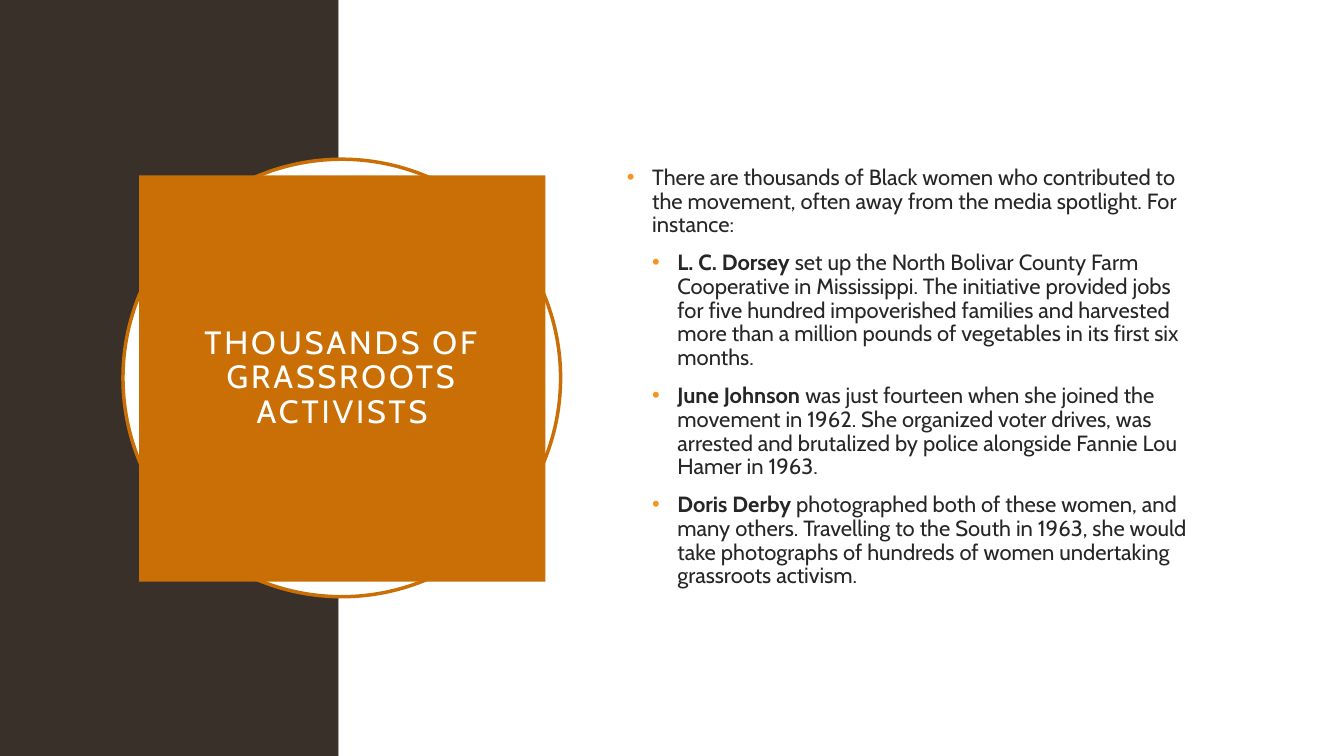
"""Builds a slide on grassroots activists of the movement."""
import pptx
import pptx.util
import pptx.dml.color
import pptx.enum.shapes
import pptx.enum.text
import lxml.etree

Inches = pptx.util.Inches
Pt = pptx.util.Pt
SHAPE = pptx.enum.shapes.MSO_SHAPE
MIDDLE = pptx.enum.text.MSO_ANCHOR.MIDDLE
CENTER = pptx.enum.text.PP_ALIGN.CENTER
NS = "{http://schemas.openxmlformats.org/drawingml/2006/main}"
ORANGE = "CA6F06"


def paint(target, color):
    if hasattr(target, "solid"):
        target.solid()
        target = target.fore_color
    target.rgb = pptx.dml.color.RGBColor.from_string(color)


def write(para, text, size, color, bold=False):
    run = para.add_run()
    run.text = text
    style = {"name": "Cabin", "size": Pt(size), "bold": bold}
    for key, value in style.items():
        setattr(run.font, key, value)
    paint(run.font.color, color)
    return run


deck = pptx.Presentation()
deck.slide_width = Inches(13.33)
deck.slide_height = Inches(7.5)
slide = deck.slides.add_slide(deck.slide_layouts[6])

panels = [
    (SHAPE.RECTANGLE, (0, 0, 3.36, 7.5), "39302A", None),
    (SHAPE.RECTANGLE, (3.36, 0, 9.97, 7.5), "FFFFFF", None),
    (SHAPE.OVAL, (1.22, 1.58, 4.34, 4.34), "FFFFFF", ORANGE),
    (SHAPE.RECTANGLE, (1.38, 1.74, 4.03, 4.03), ORANGE, None),
]
for kind, box, fill, line in panels:
    panel = slide.shapes.add_shape(kind, *map(Inches, box))
    panel.shadow.inherit = False
    paint(panel.fill, fill)
    if line:
        paint(panel.line.fill, line)
        panel.line.width = Pt(2.5)
    else:
        panel.line.fill.background()

frame = panel.text_frame
for side in ("left", "right", "top", "bottom"):
    setattr(frame, f"margin_{side}", Inches(0.2))
for key, value in {"word_wrap": True, "vertical_anchor": MIDDLE}.items():
    setattr(frame, key, value)
para = frame.paragraphs[0]
for key, value in {"alignment": CENTER, "line_spacing": 0.9}.items():
    setattr(para, key, value)
title = write(para, "THOUSANDS OF GRASSROOTS ACTIVISTS", 23, "FFFFFF")
title.font._element.set("spc", "200")

points = [
    (0, "", "There are thousands of Black women who contributed to the movement, "
     "often away from the media spotlight. For instance:"),
    (1, "L. C. Dorsey ", "set up the North Bolivar County Farm Cooperative in "
     "Mississippi. The initiative provided jobs for five hundred impoverished "
     "families and harvested more than a million pounds of vegetables in its "
     "first six months."),
    (1, "June Johnson ", "was just fourteen when she joined the movement in 1962. "
     "She organized voter drives, was arrested and brutalized by police alongside "
     "Fannie Lou Hamer in 1963."),
    (1, "Doris Derby ", "photographed both of these women, and many others. "
     "Travelling to the South in 1963, she would take photographs of hundreds of "
     "women undertaking grassroots activism."),
]
body = slide.shapes.add_textbox(*map(Inches, (6.12, 1.53, 5.82, 4.43))).text_frame
for key, value in {"word_wrap": True, "vertical_anchor": MIDDLE}.items():
    setattr(body, key, value)
for i, (level, name, text) in enumerate(points):
    para = body.add_paragraph() if i else body.paragraphs[0]
    layout = {"level": level, "line_spacing": 0.9, "space_before": Pt(10)}
    for key, value in layout.items():
        setattr(para, key, value)
    props = para._p.get_or_add_pPr()
    props.set("marL", str(Inches(0.25 * (level + 1))))
    props.set("indent", str(Inches(-0.25)))
    tint = lxml.etree.SubElement(props, NS + "buClr")
    lxml.etree.SubElement(tint, NS + "srgbClr", val="F8931D")
    lxml.etree.SubElement(props, NS + "buFont", typeface="Arial")
    lxml.etree.SubElement(props, NS + "buChar", char="•")
    if name:
        write(para, name, 15.7, "262626", True)
    write(para, text, 15.7, "262626")

deck.save("out.pptx")
